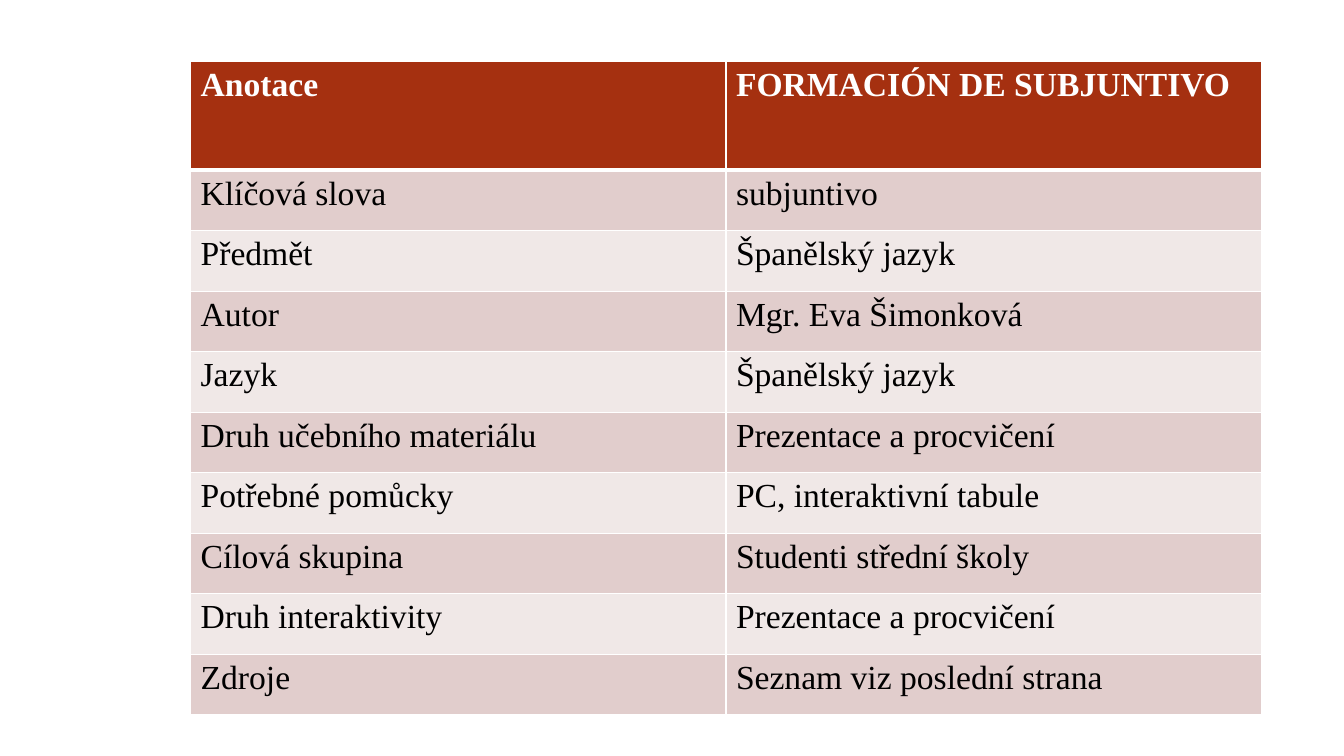
from lxml import etree
from pptx import Presentation
from pptx import util as u
from pptx.dml.color import RGBColor
from pptx.oxml.ns import qn

COLORS = {
    "header": "A53010",
    "odd": "E1CDCC",
    "even": "F0E8E7",
    "white": "FFFFFF",
    "black": "000000",
}

ROWS = [
    ("Anotace", "FORMACIÓN DE SUBJUNTIVO"),
    ("Klíčová slova", "subjuntivo"),
    ("Předmět", "Španělský jazyk"),
    ("Autor", "Mgr. Eva Šimonková"),
    ("Jazyk", "Španělský jazyk"),
    ("Druh učebního materiálu", "Prezentace a procvičení"),
    ("Potřebné pomůcky", "PC, interaktivní tabule"),
    ("Cílová skupina", "Studenti střední školy"),
    ("Druh interaktivity", "Prezentace a procvičení"),
    ("Zdroje", "Seznam viz poslední strana"),
]


class SlideBuilder:
    def __init__(self, slide, font, size):
        self.slide = slide
        self.font = font
        self.size = size

    def color(self, name):
        return RGBColor.from_string(COLORS[name])

    def borders(self, cell, widths):
        """Draw white borders; widths maps each side to points."""
        properties = cell._tc.get_or_add_tcPr()
        for position, (side, width) in enumerate(widths.items()):
            line = etree.Element(qn(f"a:ln{side}"), w=str(u.Pt(width)))
            fill = etree.SubElement(line, qn("a:solidFill"))
            etree.SubElement(fill, qn("a:srgbClr"), val=COLORS["white"])
            properties.insert(position, line)

    def cell(self, cell, content, fill, color, bold):
        cell.fill.solid()
        cell.fill.fore_color.rgb = self.color(fill)
        run = cell.text_frame.paragraphs[0].add_run()
        run.text = content
        run.font.name = self.font
        run.font.size = u.Pt(self.size)
        run.font.bold = bold
        run.font.color.rgb = self.color(color)

    def table(self, rows, left, top, column_width, header_height, row_height):
        columns = len(rows[0])
        height = header_height + row_height * (len(rows) - 1)
        table = self.slide.shapes.add_table(
            len(rows), columns, u.Inches(left), u.Inches(top),
            u.Inches(column_width * columns), u.Inches(height)).table
        for column in table.columns:
            column.width = u.Inches(column_width)
        for index, values in enumerate(rows):
            header = index == 0
            table.rows[index].height = u.Inches(header_height if header else row_height)
            fill = "header" if header else "odd" if index % 2 else "even"
            # The rule under the header is thicker than the others
            widths = {"L": 1, "R": 1, "T": 3 if index == 1 else 1, "B": 3 if header else 1}
            for cell, content in zip(table.rows[index].cells, values):
                self.cell(cell, content, fill, "white" if header else "black", header)
                self.borders(cell, widths)


def main():
    presentation = Presentation()
    presentation.slide_width = u.Inches(13.33)
    presentation.slide_height = u.Inches(7.5)
    slide = presentation.slides.add_slide(presentation.slide_layouts[6])

    # Annotation table
    builder = SlideBuilder(slide, "Times New Roman", 24)
    builder.table(ROWS, left=1.89, top=0.61, column_width=5.31,
                  header_height=1.08, row_height=0.6)

    presentation.save("out.pptx")


if __name__ == "__main__":
    main()
